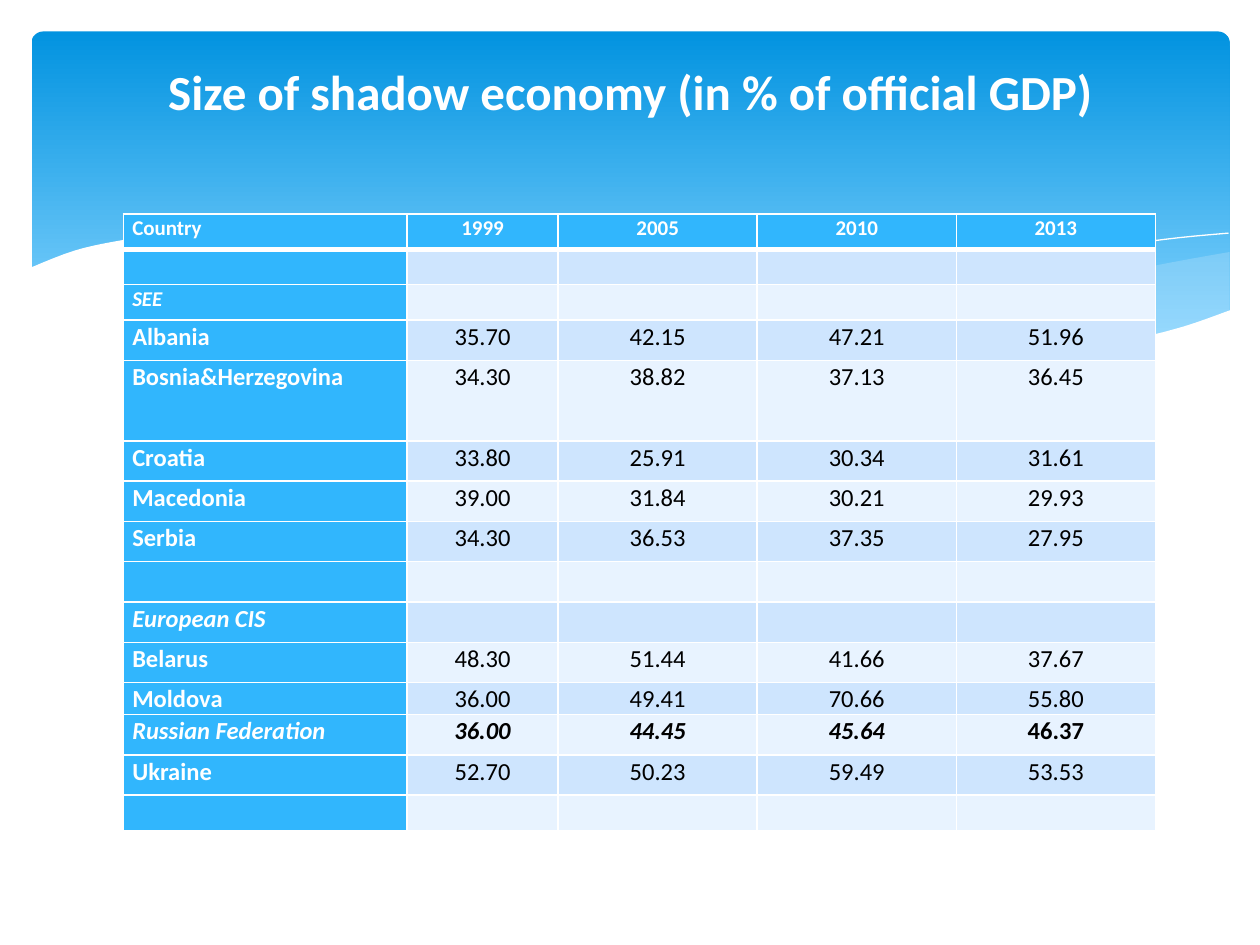
import dataclasses

import lxml.etree
import pptx
import pptx.dml.color
import pptx.enum.dml
import pptx.enum.shapes
import pptx.enum.text
import pptx.oxml.ns
import pptx.util

COLUMNS = 10
ROWS = 7.5
MODULE = pptx.util.Inches(1)
ALIGN = pptx.enum.text.PP_ALIGN


@dataclasses.dataclass(frozen=True)
class Theme:
    """Colours, font and type sizes of the slide."""
    font: str = "Calibri"
    white: str = "FFFFFF"
    black: str = "000000"
    banner_top: str = "0293E0"
    banner_bottom: str = "83D3FE"
    wave: str = "C6E7FC"
    label: str = "31B6FD"
    bands: tuple = ("CEE5FE", "E8F3FF")
    title_size: int = 28
    body_size: int = 14
    small_size: int = 12


THEME = Theme()

COLUMN_WIDTHS = [2.25, 1.2, 1.58, 1.58, 1.58]
SHORT, TALL, TIGHT = 0.28, 0.32, 0.22
TABLE_ROWS = [
    ("Country", "1999 2005 2010 2013", SHORT),
    ("", "", SHORT),
    ("SEE", "", SHORT),
    ("Albania", "35.70 42.15 47.21 51.96", TALL),
    ("Bosnia&Herzegovina", "34.30 38.82 37.13 36.45", 2 * TALL),
    ("Croatia", "33.80 25.91 30.34 31.61", TALL),
    ("Macedonia", "39.00 31.84 30.21 29.93", TALL),
    ("Serbia", "34.30 36.53 37.35 27.95", TALL),
    ("", "", TALL),
    ("European CIS", "", TALL),
    ("Belarus", "48.30 51.44 41.66 37.67", TALL),
    ("Moldova", "36.00 49.41 70.66 55.80", TIGHT),
    ("Russian Federation", "36.00 44.45 45.64 46.37", TALL),
    ("Ukraine", "52.70 50.23 59.49 53.53", TALL),
    ("", "", SHORT),
]
ITALIC_LABELS = {"SEE", "European CIS", "Russian Federation"}
BOLD_ROW = "Russian Federation"

RIGHT_WAVE = [
    [(9.76, 2), (9.21, 2.1), (8.61, 2.23), (7.79, 2.42), (7.06, 2.57), (6.61, 2.65)],
    [(6.61, 2.65), (7.19, 2.72), (7.69, 2.77), (8.14, 2.78), (8.63, 2.75),
     (9.05, 2.69), (9.42, 2.59), (9.76, 2.47)],
]
LONG_WAVE = [
    [(8.93, 2.73), (8.07, 2.6), (7.06, 2.4), (6.29, 2.22), (5.55, 2.05), (4.89, 1.94),
     (4.2, 1.87), (3.61, 1.85), (3.13, 1.88), (2.86, 1.91)],
    [(2.86, 1.91), (3.62, 2.03), (4.49, 2.22), (5.3, 2.4), (6.01, 2.55), (6.65, 2.66),
     (7.22, 2.74), (7.73, 2.77), (8.18, 2.78), (8.57, 2.77), (8.93, 2.73)],
]
LONG_LINE = [[(3.09, 1.95), (3.53, 1.89), (4.16, 1.87), (4.89, 1.9), (5.82, 2),
              (6.65, 2.13), (7.6, 2.33), (8.31, 2.51), (9.07, 2.72)]]
RIGHT_LINE = [[(6.13, 2.57), (6.95, 2.35), (7.76, 2.16), (8.66, 1.99), (9.24, 1.9), (9.75, 1.85)]]
WHITE_FRONT = [
    [(9.77, 2.46), (9.4, 2.59), (8.99, 2.69), (8.5, 2.75), (8.09, 2.77), (7.61, 2.75),
     (6.88, 2.68), (6.03, 2.54), (5.29, 2.39), (4.47, 2.2), (3.65, 2.02), (2.92, 1.9),
     (2.3, 1.85), (1.77, 1.84), (1.32, 1.86), (0.95, 1.91), (0.59, 1.99), (0.23, 2.13)],
    [(0.23, 3.29), (9.77, 3.29)],
]


def units(value):
    """Convert grid modules to slide units."""
    return round(value * MODULE)


def colour(code):
    """Turn a hexadecimal code into a colour."""
    return pptx.dml.color.RGBColor.from_string(code)


def smooth(points, steps=5):
    """Return a Catmull-Rom curve through the points."""
    padded = [points[0], *points, points[-1]]
    curve = [points[0]]
    for a, b, c, d in zip(padded, padded[1:], padded[2:], padded[3:]):
        for t in (step / steps for step in range(1, steps + 1)):
            curve.append(tuple(
                0.5 * (2 * q + (r - p) * t + (2 * p - 5 * q + 4 * r - s) * t ** 2
                       + (3 * q - p - 3 * r + s) * t ** 3)
                for p, q, r, s in zip(a, b, c, d)))
    return curve


def add_curve(slide, edges, fill=None, alpha=100):
    """Draw smooth edges as a filled area, or as a hairline without fill."""
    points = [(units(x), units(y)) for edge in edges for x, y in smooth(edge)]
    builder = slide.shapes.build_freeform(*points[0])
    builder.add_line_segments(points[1:], close=fill is not None)
    shape = builder.convert_to_shape()
    shape.shadow.inherit = False
    if fill is None:
        shape.fill.background()
        shape.line.color.rgb = colour(THEME.white)
        shape.line.width = 0
        return
    shape.line.fill.background()
    shape.fill.solid()
    shape.fill.fore_color.rgb = colour(fill)
    if alpha < 100:
        code = shape.element.find(".//" + pptx.oxml.ns.qn("a:srgbClr"))
        lxml.etree.SubElement(code, pptx.oxml.ns.qn("a:alpha"), val=str(alpha * 1000))


def add_banner(slide):
    """Draw the rounded gradient banner."""
    shape = slide.shapes.add_shape(pptx.enum.shapes.MSO_SHAPE.ROUNDED_RECTANGLE,
                                   *map(units, (0.25, 0.25, 9.51, 2.7)))
    shape.adjustments[0] = 0.034
    shape.shadow.inherit = False
    shape.line.fill.background()
    shape.fill.gradient()
    shape.fill.gradient_angle = 270
    stops = [(0, THEME.banner_top), (0.9, THEME.banner_bottom)]
    for stop, (position, code) in zip(shape.fill.gradient_stops, stops):
        stop.position = position
        stop.color.rgb = colour(code)


def add_text(paragraph, text, size, code, bold=False, italic=False):
    """Add one formatted run to a paragraph."""
    run = paragraph.add_run()
    run.text = text
    run.font.name = THEME.font
    run.font.size = pptx.util.Pt(size)
    run.font.bold = bold
    run.font.italic = italic
    run.font.color.rgb = colour(code)


def set_title(slide, text):
    """Fill the title placeholder and bring it in front of the banner."""
    title = slide.shapes.title
    title.left, title.top, title.width, title.height = map(units, (0.5, 0.37, 9, 0.7))
    title.element.getparent().append(title.element)
    title.text_frame.vertical_anchor = pptx.enum.text.MSO_ANCHOR.MIDDLE
    paragraph = title.text_frame.paragraphs[0]
    paragraph.alignment = ALIGN.CENTER
    add_text(paragraph, text, THEME.title_size, THEME.white, bold=True)


def set_borders(cell, row):
    """Give a cell white borders, thick below the header row."""
    properties = cell._tc.get_or_add_tcPr()
    widths = {"L": 1, "R": 1, "T": 3 if row == 1 else 1, "B": 3 if row == 0 else 1}
    for side, width in widths.items():
        line = lxml.etree.SubElement(properties, pptx.oxml.ns.qn("a:ln" + side),
                                     w=str(pptx.util.Pt(width)))
        fill = lxml.etree.SubElement(line, pptx.oxml.ns.qn("a:solidFill"))
        lxml.etree.SubElement(fill, pptx.oxml.ns.qn("a:srgbClr"), val=THEME.white)


def fill_cell(cell, row, column, text, label):
    """Format one table cell and write its text."""
    set_borders(cell, row)
    strong = row == 0 or column == 0
    cell.fill.solid()
    cell.fill.fore_color.rgb = colour(THEME.label if strong else THEME.bands[(row + 1) % 2])
    cell.margin_left = cell.margin_right = units(0.07)
    cell.margin_top = cell.margin_bottom = 0
    paragraph = cell.text_frame.paragraphs[0]
    paragraph.line_spacing = 1.07
    paragraph.alignment = ALIGN.CENTER if column else ALIGN.LEFT
    size = THEME.small_size if row < 3 else THEME.body_size
    if text:
        add_text(paragraph, text, size, THEME.white if strong else THEME.black,
                 bold=strong or label == BOLD_ROW,
                 italic=label in ITALIC_LABELS and column < len(COLUMN_WIDTHS) - 1)
    else:
        lxml.etree.SubElement(paragraph._p, pptx.oxml.ns.qn("a:endParaRPr"),
                              sz=str(THEME.small_size * 100))


def add_economy_table(slide):
    """Build the table of shadow economy shares."""
    heights = [height for _, _, height in TABLE_ROWS]
    frame = slide.shapes.add_table(len(TABLE_ROWS), len(COLUMN_WIDTHS), *map(
        units, (0.98, 1.7, sum(COLUMN_WIDTHS), sum(heights))))
    table = frame.table
    for column, width in zip(table.columns, COLUMN_WIDTHS):
        column.width = units(width)
    for row, (label, values, height) in enumerate(TABLE_ROWS):
        table.rows[row].height = units(height)
        texts = [label, *(values.split() or [""] * (len(COLUMN_WIDTHS) - 1))]
        for column, text in enumerate(texts):
            fill_cell(table.cell(row, column), row, column, text, label)


def main():
    """Build and save the slide."""
    presentation = pptx.Presentation()
    presentation.slide_width = units(COLUMNS)
    presentation.slide_height = units(ROWS)
    slide = presentation.slides.add_slide(presentation.slide_layouts[5])
    add_banner(slide)
    add_curve(slide, RIGHT_WAVE, THEME.wave, 29)
    add_curve(slide, LONG_WAVE, THEME.wave, 40)
    add_curve(slide, LONG_LINE)
    add_curve(slide, RIGHT_LINE)
    add_curve(slide, WHITE_FRONT, THEME.white)
    set_title(slide, "Size of shadow economy (in % of official GDP)")
    add_economy_table(slide)
    presentation.save("out.pptx")


if __name__ == "__main__":
    main()
